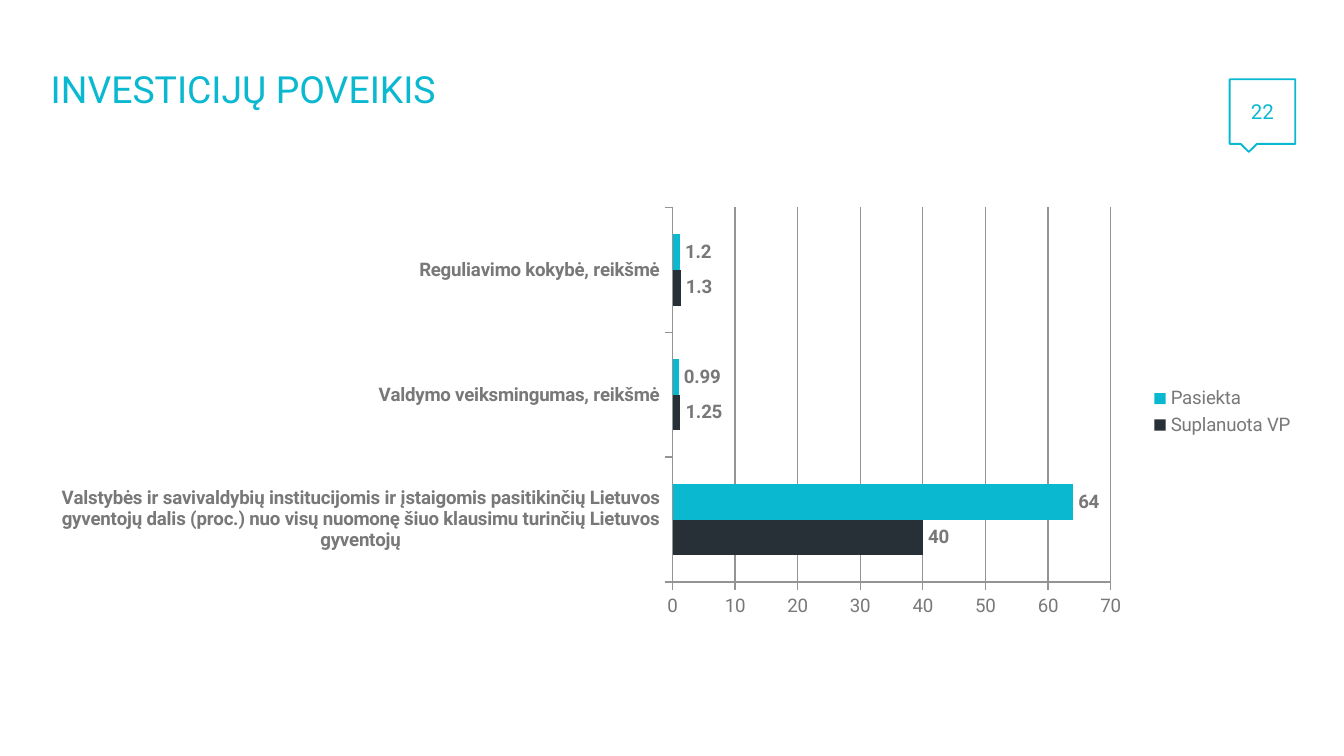
from lxml.etree import SubElement
from pptx import Presentation
from pptx.chart.data import CategoryChartData
from pptx.dml.color import RGBColor
from pptx.enum.chart import XL_CHART_TYPE, XL_LABEL_POSITION, XL_LEGEND_POSITION, XL_TICK_MARK
from pptx.enum.shapes import MSO_SHAPE
from pptx.enum.text import MSO_ANCHOR, PP_ALIGN
from pptx.oxml.ns import qn
from pptx.util import Cm, Pt

TEAL = "0AB8D0"
DARK = "272F37"
GREY = "787878"
RULE = "949494"


def color(value):
    return RGBColor.from_string(value)


def style_font(font, size, value, bold=False):
    font.name = "Roboto"
    font.size = Pt(size)
    font.bold = bold
    font.color.rgb = color(value)


deck = Presentation()
deck.slide_width = Cm(25.4)
deck.slide_height = Cm(14.29)
page = deck.slides.add_slide(deck.slide_layouts[6])

data = CategoryChartData()
data.categories = [
    "Valstybės ir savivaldybių institucijomis ir įstaigomis pasitikinčių Lietuvos "
    "gyventojų dalis (proc.) nuo visų nuomonę šiuo klausimu turinčių Lietuvos gyventojų",
    "Valdymo veiksmingumas, reikšmė",
    "Reguliavimo kokybė, reikšmė",
]
data.add_series("Suplanuota VP", (40, 1.25, 1.3))
data.add_series("Pasiekta", (64, 0.99, 1.2))

chart = page.shapes.add_chart(
    XL_CHART_TYPE.BAR_CLUSTERED, Cm(0.71), Cm(3.76), Cm(24), Cm(8.05), data
).chart
chart.has_title = False
style_font(chart.font, 10, GREY)
chart.has_legend = True
chart.legend.position = XL_LEGEND_POSITION.RIGHT
chart.legend.include_in_layout = False
style_font(chart.legend.font, 10, GREY)

for axis, bold in ((chart.category_axis, True), (chart.value_axis, False)):
    axis.major_tick_mark = XL_TICK_MARK.OUTSIDE
    axis.minor_tick_mark = XL_TICK_MARK.NONE
    axis.format.line.color.rgb = color(RULE)
    axis.format.line.width = Pt(0.75)
    style_font(axis.tick_labels.font, 10, GREY, bold)

values = chart.value_axis
values.minimum_scale = 0
values.maximum_scale = 70
values.major_unit = 10
values.has_major_gridlines = True
values.major_gridlines.format.line.color.rgb = color(RULE)
values.major_gridlines.format.line.width = Pt(0.75)

plot = chart.plots[0]
plot.gap_width = 150
plot.overlap = 0
plot.vary_by_categories = False
for series, fill in zip(plot.series, (DARK, TEAL)):
    series.format.fill.solid()
    series.format.fill.fore_color.rgb = color(fill)
    labels = series.data_labels
    labels.show_value = True
    labels.position = XL_LABEL_POSITION.OUTSIDE_END
    style_font(labels.font, 10, GREY, True)

area = chart._chartSpace.chart.plotArea
for old in area.findall(qn("c:layout")):
    area.remove(old)
layout = SubElement(area, qn("c:layout"))
area.insert(0, layout)
manual = SubElement(layout, qn("c:manualLayout"))
for name, value in (
    ("layoutTarget", "inner"), ("xMode", "edge"), ("yMode", "edge"),
    ("x", "0.5"), ("y", "0.02"), ("w", "0.345"), ("h", "0.88"),
):
    SubElement(manual, qn(f"c:{name}")).set("val", value)

badge = page.shapes.add_shape(
    MSO_SHAPE.RECTANGULAR_CALLOUT, Cm(23.24), Cm(1.5), Cm(1.24), Cm(1.22)
)
badge.shadow.inherit = False
badge.fill.background()
badge.line.color.rgb = color(TEAL)
badge.line.width = Pt(1)

title = page.shapes.add_textbox(Cm(0.71), Cm(1.19), Cm(8.48), Cm(1.09))

for box, text, size, wrap, align, across, down in (
    (badge, "22", 11, False, PP_ALIGN.CENTER, 0.4, 0.38),
    (title, "INVESTICIJŲ POVEIKIS", 20, True, PP_ALIGN.LEFT, 0.25, 0.13),
):
    frame = box.text_frame
    frame.word_wrap = wrap
    frame.vertical_anchor = MSO_ANCHOR.MIDDLE
    frame.margin_left = frame.margin_right = Cm(across)
    frame.margin_top = frame.margin_bottom = Cm(down)
    para = frame.paragraphs[0]
    para.text = text
    para.alignment = align
    style_font(para.font, size, TEAL)
title.text_frame.paragraphs[0].line_spacing = 0.9

deck.save("out.pptx")
